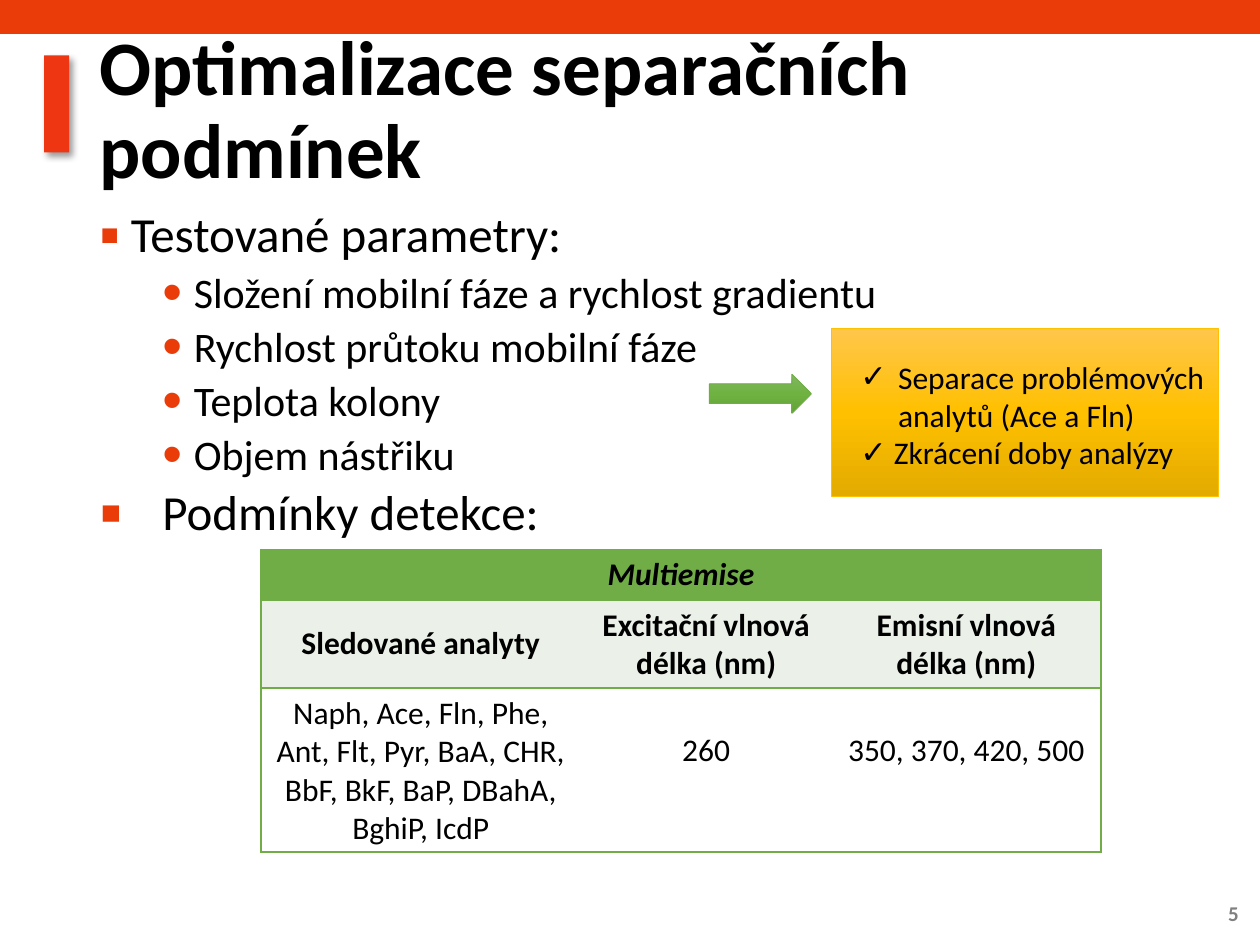
from copy import deepcopy

from lxml.etree import SubElement
from pptx import Presentation
from pptx.dml.color import RGBColor
from pptx.enum.shapes import MSO_SHAPE as Shape
from pptx.enum.text import MSO_ANCHOR as Anchor, PP_ALIGN as Align
from pptx.oxml import parse_xml
from pptx.oxml.ns import nsdecls, qn
from pptx.util import Inches, Pt

FONT = "Calibri"
BLACK = RGBColor(0, 0, 0)
WHITE = RGBColor(0xFF, 0xFF, 0xFF)
GRAY = RGBColor(0x80, 0x80, 0x80)
ORANGE = RGBColor(0xE9, 0x3C, 0x09)
RED = RGBColor(0xEE, 0x37, 0x12)
GREEN = RGBColor(0x70, 0xAD, 0x47)
PALE_GREEN = RGBColor(0xEB, 0xF1, 0xE9)
GOLD = RGBColor(0xFF, 0xC0, 0x00)
ARROW_STOPS = [RGBColor(0x81, 0xB8, 0x61), RGBColor(0x6F, 0xB2, 0x42), RGBColor(0x62, 0xA3, 0x36)]
BOX_STOPS = [RGBColor(0xFF, 0xC6, 0x4B), GOLD, RGBColor(0xE3, 0xAB, 0x00)]
NO_STYLE = "{2D5ABB26-0587-4C30-8999-92F81FD0307C}"

PARAMETERS = [
    "Složení mobilní fáze a rychlost gradientu",
    "Rychlost průtoku mobilní fáze",
    "Teplota kolony",
    "Objem nástřiku",
]
TABLE_ROWS = [
    ["Multiemise", "", ""],
    ["Sledované analyty", "Excitační vlnová délka (nm)", "Emisní vlnová délka (nm)"],
    [
        "Naph, Ace, Fln, Phe, Ant, Flt, Pyr, BaA, CHR, BbF, BkF, BaP, DBahA, BghiP, IcdP",
        "260",
        "350, 370, 420, 500",
    ],
]


def style_runs(paragraph, size, color=BLACK, bold=False, italic=False):
    """Format every run of a paragraph."""
    for run in paragraph.runs:
        font = run.font
        font.name, font.size, font.bold, font.italic = FONT, Pt(size), bold, italic
        font.color.rgb = color


def add_bullet(paragraph, character, indent=(0, 0), color=None, percent=None):
    """Give a paragraph a bullet and a hanging indent."""
    properties = paragraph._p.get_or_add_pPr()
    left, first = indent
    properties.set("marL", str(Inches(left)))
    properties.set("indent", str(Inches(first)))
    if color is not None:
        bullet_color = SubElement(properties, qn("a:buClr"))
        SubElement(bullet_color, qn("a:srgbClr"), val=str(color))
    if percent is not None:
        SubElement(properties, qn("a:buSzPct"), val=str(percent * 1000))
    SubElement(properties, qn("a:buFont"), typeface="Arial")
    SubElement(properties, qn("a:buChar"), char=character)


def add_text_box(slide, left, top, width, height):
    """Add a wrapping text box and return its text frame."""
    box = slide.shapes.add_textbox(Inches(left), Inches(top), Inches(width), Inches(height))
    box.text_frame.word_wrap = True
    return box.text_frame


def add_bar(slide, left, top, width, height, color):
    """Add a plain rectangle without an outline."""
    bar = slide.shapes.add_shape(
        Shape.RECTANGLE, Inches(left), Inches(top), Inches(width), Inches(height))
    bar.shadow.inherit = False
    bar.fill.solid()
    bar.fill.fore_color.rgb = color
    bar.line.fill.background()
    return bar


def add_shadow(shape):
    """Add a soft shadow to the lower right."""
    effects = shape._element.spPr.find(qn("a:effectLst"))
    effects.append(parse_xml(
        f'<a:outerShdw {nsdecls("a")} blurRad="{Pt(4)}" dist="{Pt(3)}" dir="2700000" '
        'algn="tl" rotWithShape="0"><a:srgbClr val="000000"><a:alpha val="40000"/>'
        '</a:srgbClr></a:outerShdw>'))


def add_gradient_shape(slide, kind, left, top, width, height, colors, line_color):
    """Add a shape with an even top-to-bottom gradient."""
    shape = slide.shapes.add_shape(
        kind, Inches(left), Inches(top), Inches(width), Inches(height))
    shape.shadow.inherit = False
    shape.fill.gradient()
    shape.fill.gradient_angle = 270
    stop_list = shape._element.spPr.find(".//" + qn("a:gsLst"))
    stop_list.insert(1, deepcopy(stop_list[0]))
    for index, (stop, color) in enumerate(zip(shape.fill.gradient_stops, colors)):
        stop.position = index / (len(colors) - 1)
        stop.color.rgb = color
    shape.line.color.rgb = line_color
    shape.line.width = Pt(0.5)


def add_title(slide, text):
    """Place and format the title placeholder."""
    title = slide.shapes.title
    title.left, title.top = Inches(0.69), Inches(0.4)
    title.width, title.height = Inches(9.05), Inches(0.98)
    frame = title.text_frame
    frame.text = text
    frame.word_wrap = True
    frame.vertical_anchor = Anchor.MIDDLE
    paragraph = frame.paragraphs[0]
    paragraph.alignment = Align.LEFT
    paragraph.line_spacing = 0.9
    style_runs(paragraph, 44, bold=True)


def add_body(slide):
    """Add the two-level bullet list."""
    frame = add_text_box(slide, 0.69, 1.62, 8.66, 5.14)
    items = [("Testované parametry:", 0, "▪", (0.25, -0.25), 120, 28)]
    items += [(text, 1, "•", (0.75, -0.25), 134, 24) for text in PARAMETERS]
    items += [("Podmínky detekce:", 0, "▪", (0.5, -0.5), 134, 28)]
    frame.text = "\n".join(item[0] for item in items)
    for index, (paragraph, item) in enumerate(zip(frame.paragraphs, items)):
        _, level, character, indent, percent, size = item
        paragraph.level = level
        paragraph.line_spacing = 0.9
        if index:
            paragraph.space_before = Pt(5)
        add_bullet(paragraph, character, indent, ORANGE, percent)
        style_runs(paragraph, size)


def add_results(slide):
    """Add the checklist of results."""
    frame = add_text_box(slide, 6.73, 2.79, 3.27, 1.01)
    frame.text = "Separace problémových analytů (Ace a Fln)\n Zkrácení doby analýzy"
    for paragraph, indent in zip(frame.paragraphs, [(0.3, -0.3), (0, 0)]):
        add_bullet(paragraph, "✓", indent)
        style_runs(paragraph, 18)


def set_borders(cell, sides):
    """Draw green borders on the given sides of a cell."""
    properties = cell._tc.get_or_add_tcPr()
    for index, side in enumerate(sides):
        properties.insert(index, parse_xml(
            f'<a:ln{side} {nsdecls("a")} w="{Pt(1)}"><a:solidFill>'
            f'<a:srgbClr val="{GREEN}"/></a:solidFill></a:ln{side}>'))


def add_detection_table(slide):
    """Add the table of detection wavelengths."""
    widths, heights = [2.54, 1.99, 2.14], [0.37, 0.65, 1.24]
    table = slide.shapes.add_table(
        3, 3, Inches(2.07), Inches(4.36), Inches(sum(widths)), Inches(sum(heights))).table
    table._tbl.tblPr.find(qn("a:tableStyleId")).text = NO_STYLE
    table.first_row = table.horz_banding = False
    for column, width in zip(table.columns, widths):
        column.width = Inches(width)
    for row, height in zip(table.rows, heights):
        row.height = Inches(height)
    table.cell(0, 0).merge(table.cell(0, 2))
    for row, (texts, fill) in enumerate(zip(TABLE_ROWS, [GREEN, PALE_GREEN, WHITE])):
        for column, text in enumerate(texts):
            cell = table.cell(row, column)
            cell.fill.solid()
            cell.fill.fore_color.rgb = fill
            set_borders(cell, (["LTB", "TB", "RTB"] if row else ["LRTB"] * 3)[column])
            cell.vertical_anchor = Anchor.MIDDLE
            if row == 2 and column:
                cell.margin_bottom = Inches(0.35)
            if text:
                cell.text_frame.text = text
                paragraph = cell.text_frame.paragraphs[0]
                paragraph.alignment = Align.CENTER
                style_runs(paragraph, 18, bold=row < 2, italic=row == 0)


def add_page_number(slide, number):
    """Add the page number at the lower right."""
    frame = add_text_box(slide, 9.25, 7.05, 0.68, 0.4)
    frame.text = number
    frame.vertical_anchor = Anchor.MIDDLE
    frame.paragraphs[0].alignment = Align.RIGHT
    style_runs(frame.paragraphs[0], 12, GRAY, bold=True)


def main():
    """Build the slide and save it."""
    presentation = Presentation()
    presentation.slide_width, presentation.slide_height = Inches(10), Inches(7.5)
    slide = presentation.slides.add_slide(presentation.slide_layouts[5])
    add_bar(slide, 0, 0, 10, 0.27, ORANGE)
    add_shadow(add_bar(slide, 0.35, 0.44, 0.2, 0.77, RED))
    add_page_number(slide, "5")
    add_title(slide, "Optimalizace separačních podmínek")
    add_body(slide)
    add_detection_table(slide)
    add_gradient_shape(slide, Shape.RIGHT_ARROW, 5.63, 2.97, 0.81, 0.31, ARROW_STOPS, GREEN)
    add_gradient_shape(slide, Shape.RECTANGLE, 6.6, 2.61, 3.07, 1.33, BOX_STOPS, GOLD)
    add_results(slide)
    presentation.save("out.pptx")


if __name__ == "__main__":
    main()
